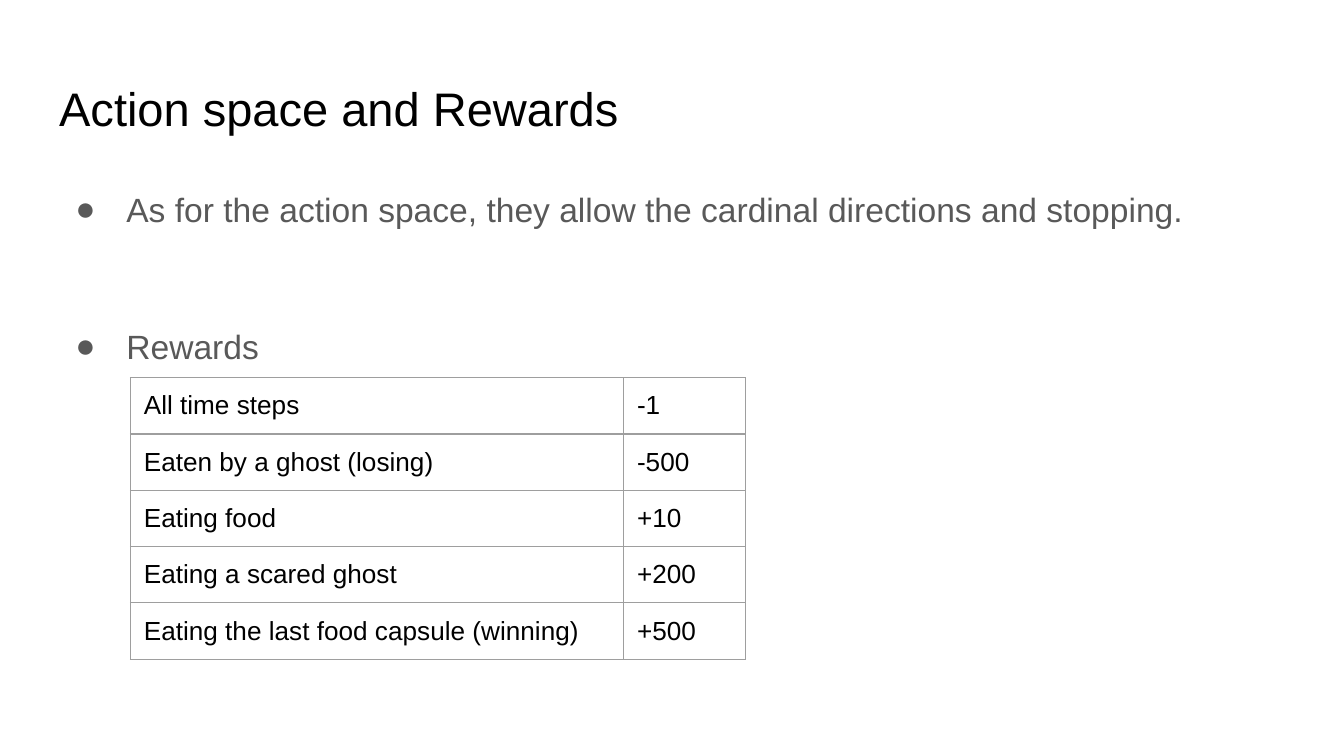
from lxml import etree
from pptx import Presentation
from pptx.dml.color import RGBColor
from pptx.enum.text import MSO_ANCHOR, MSO_AUTO_SIZE, PP_ALIGN
from pptx.oxml.ns import qn
from pptx.util import Inches, Pt

LEFT = PP_ALIGN.LEFT
TOP = MSO_ANCHOR.TOP
NO_FIT = MSO_AUTO_SIZE.NONE
BLACK, GRAY, BORDER = "000000", "595959", "9E9E9E"


def style(p, size, color):
    p.alignment = LEFT
    for r in p.runs:
        r.font.name = "Arial"
        r.font.size = Pt(size)
        r.font.color.rgb = RGBColor.from_string(color)


def set_frame(tf):
    tf.margin_left = tf.margin_right = Inches(0.1)
    tf.margin_top = tf.margin_bottom = Inches(0.1)
    tf.vertical_anchor = TOP
    tf.word_wrap = True
    tf.auto_size = NO_FIT


# Widescreen 16:9 slide
prs = Presentation()
prs.slide_width, prs.slide_height = Inches(10), Inches(10 * 9 / 16)
s = prs.slides.add_slide(prs.slide_layouts[1])
title, body = s.placeholders

# Title
title.left, title.top = Inches(0.34), Inches(0.49)
title.width, title.height = Inches(9.32), Inches(0.63)
title.text_frame.text = "Action space and Rewards"
set_frame(title.text_frame)
style(title.text_frame.paragraphs[0], 25.2, BLACK)

# Bullet list
body.left, body.top = Inches(0.34), Inches(1.26)
body.width, body.height = Inches(9.32), Inches(3.74)
tf = body.text_frame
tf.text = ("As for the action space, they allow the cardinal directions and stopping."
           "\nRewards")
set_frame(tf)
for p, gap in zip(tf.paragraphs, (0, 48.5)):
    style(p, 18, GRAY)
    p.line_spacing = 1.15
    p.space_before = Pt(gap)
    pPr = p._p.get_or_add_pPr()
    pPr.set("marL", str(Inches(0.5)))
    pPr.set("indent", str(Inches(-0.38)))
    color = etree.SubElement(pPr, qn("a:buClr"))
    etree.SubElement(color, qn("a:srgbClr"), val=GRAY)
    etree.SubElement(pPr, qn("a:buSzPts"), val="1800")
    etree.SubElement(pPr, qn("a:buFont"), typeface="Arial")
    etree.SubElement(pPr, qn("a:buChar"), char="●")

# Rewards table
rewards = [
    ("All time steps", "-1"),
    ("Eaten by a ghost (losing)", "-500"),
    ("Eating food", "+10"),
    ("Eating a scared ghost", "+200"),
    ("Eating the last food capsule (winning)", "+500"),
]
table = s.shapes.add_table(len(rewards), 2, Inches(0.97), Inches(2.81),
                           Inches(4.58), Inches(2.08)).table
table.first_row = table.horz_banding = False
table.columns[0].width, table.columns[1].width = Inches(3.67), Inches(0.91)
for row, values in zip(table.rows, rewards):
    row.height = Inches(0.4)  # grows to fit the text and its margins
    for cell, value in zip(row.cells, values):
        cell.text = value
        cell.margin_left = cell.margin_right = Inches(0.1)
        cell.margin_top = cell.margin_bottom = Inches(0.1)
        cell.vertical_anchor = TOP
        style(cell.text_frame.paragraphs[0], 14, BLACK)
        # Borders come before the fill in the cell properties
        tcPr = cell._tc.get_or_add_tcPr()
        for side in ("lnL", "lnR", "lnT", "lnB"):
            ln = etree.SubElement(tcPr, qn(f"a:{side}"), w=str(Pt(0.75)))
            fill = etree.SubElement(ln, qn("a:solidFill"))
            etree.SubElement(fill, qn("a:srgbClr"), val=BORDER)
        cell.fill.background()

prs.save("out.pptx")
